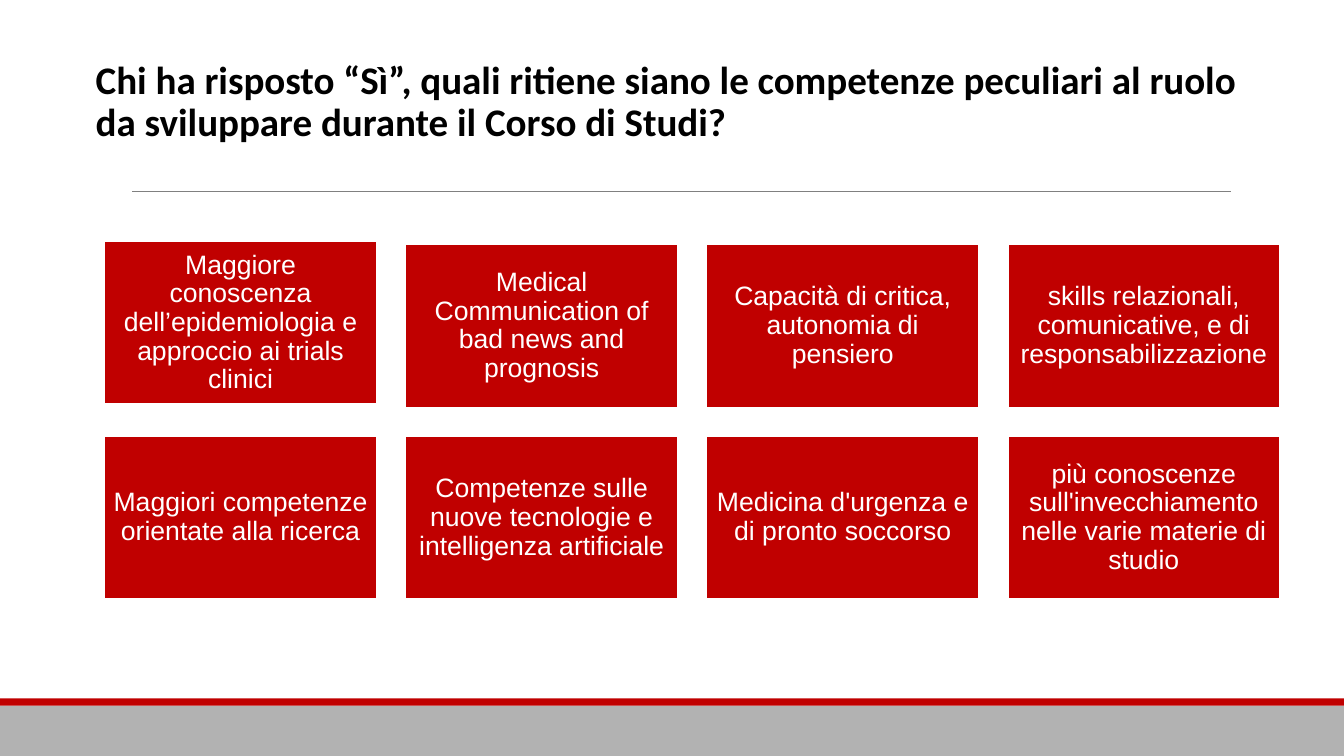
from dataclasses import dataclass

from lxml import etree
from pptx import Presentation
from pptx.dml.color import RGBColor
from pptx.enum import shapes, text
from pptx.oxml import ns
from pptx.util import Inches, Pt


@dataclass(frozen=True)
class Theme:
    red: RGBColor = RGBColor(0xC0, 0x00, 0x00)
    band: RGBColor = RGBColor(0xB2, 0xB2, 0xB2)
    rule: RGBColor = RGBColor(0x80, 0x80, 0x80)
    black: RGBColor = RGBColor(0x00, 0x00, 0x00)
    white: RGBColor = RGBColor(0xFF, 0xFF, 0xFF)
    title_font: str = "Calibri"
    tile_font: str = "Arial"
    title_size: float = 27.9
    tile_size: float = 19


THEME = Theme()
TITLE = (
    "Chi ha risposto “Sì”, quali ritiene siano le competenze peculiari al ruolo "
    "da sviluppare durante il Corso di Studi?"
)
SKILLS = [
    "Maggiore conoscenza dell’epidemiologia e approccio ai trials clinici",
    "Medical Communication of bad news and prognosis",
    "Capacità di critica, autonomia di pensiero",
    "skills relazionali, comunicative, e di responsabilizzazione",
    "Maggiori competenze orientate alla ricerca",
    "Competenze sulle nuove tecnologie e intelligenza artificiale",
    "Medicina d'urgenza e di pronto soccorso",
    "più conoscenze sull'invecchiamento nelle varie materie di studio",
]


def add_block(page, box, color):
    block = page.shapes.add_shape(
        shapes.MSO_SHAPE.RECTANGLE, *[Inches(length) for length in box]
    )
    block.shadow.inherit = False
    block.fill.solid()
    block.fill.fore_color.rgb = color
    block.line.fill.background()
    return block


def write(frame, wording, font_name, size, color, inset, anchor):
    frame.word_wrap = True
    frame.vertical_anchor = anchor
    frame.margin_left = frame.margin_right = Inches(inset)
    frame.margin_top = frame.margin_bottom = Inches(inset)
    para = frame.paragraphs[0]
    para.text = wording
    para.line_spacing = 0.9
    para.font.name = font_name
    para.font.size = Pt(size)
    para.font.color.rgb = color
    return para


def add_footer(page, box):
    left, top, width, height = box
    stripe = 0.07
    add_block(page, (left, top + stripe, width, height - stripe), THEME.band)
    add_block(page, (left, top, width, stripe), THEME.red)


def add_heading(page, box):
    left, top, width, height = box
    title = page.shapes.add_textbox(*[Inches(length) for length in box])
    para = write(title.text_frame, TITLE, THEME.title_font, THEME.title_size,
                 THEME.black, 0, text.MSO_ANCHOR.TOP)
    para.font.bold = True

    rule_left, rule_top = left + 0.36, top + height + 0.05
    rule = page.shapes.add_connector(
        shapes.MSO_CONNECTOR.STRAIGHT, Inches(rule_left), Inches(rule_top),
        Inches(rule_left + 10.9), Inches(rule_top))
    rule.line.color.rgb = THEME.rule
    rule.line.width = Pt(0.5)
    etree.SubElement(rule._element.spPr, ns.qn("a:effectLst"))


def add_skill_grid(page, box, columns=4, gap=0.275):
    left, top, width, height = box
    rows = len(SKILLS) // columns
    tile_width = (width - gap * (columns - 1)) / columns
    tile_height = (height - gap * (rows - 1)) / rows
    first_tile_lift = 0.03
    for index, skill in enumerate(SKILLS):
        row, column = divmod(index, columns)
        tile_top = top + row * (tile_height + gap)
        if index == 0:
            tile_top -= first_tile_lift
        tile = add_block(
            page,
            (left + column * (tile_width + gap), tile_top, tile_width, tile_height),
            THEME.red)
        tile.line.color.rgb = THEME.white
        tile.line.width = Pt(2)
        para = write(tile.text_frame, skill, THEME.tile_font, THEME.tile_size,
                     THEME.white, 0.08, text.MSO_ANCHOR.MIDDLE)
        para.alignment = text.PP_ALIGN.CENTER


def main():
    deck = Presentation()
    deck.slide_width, deck.slide_height = Inches(13.33), Inches(7.5)
    page = deck.slides.add_slide(deck.slide_layouts[6])
    add_footer(page, (0, 6.93, 13.33, 0.57))
    add_heading(page, (0.95, 0.6, 11.53, 1.25))
    add_skill_grid(page, (1.03, 2.42, 11.67, 3.53))
    deck.save("out.pptx")


if __name__ == "__main__":
    main()
